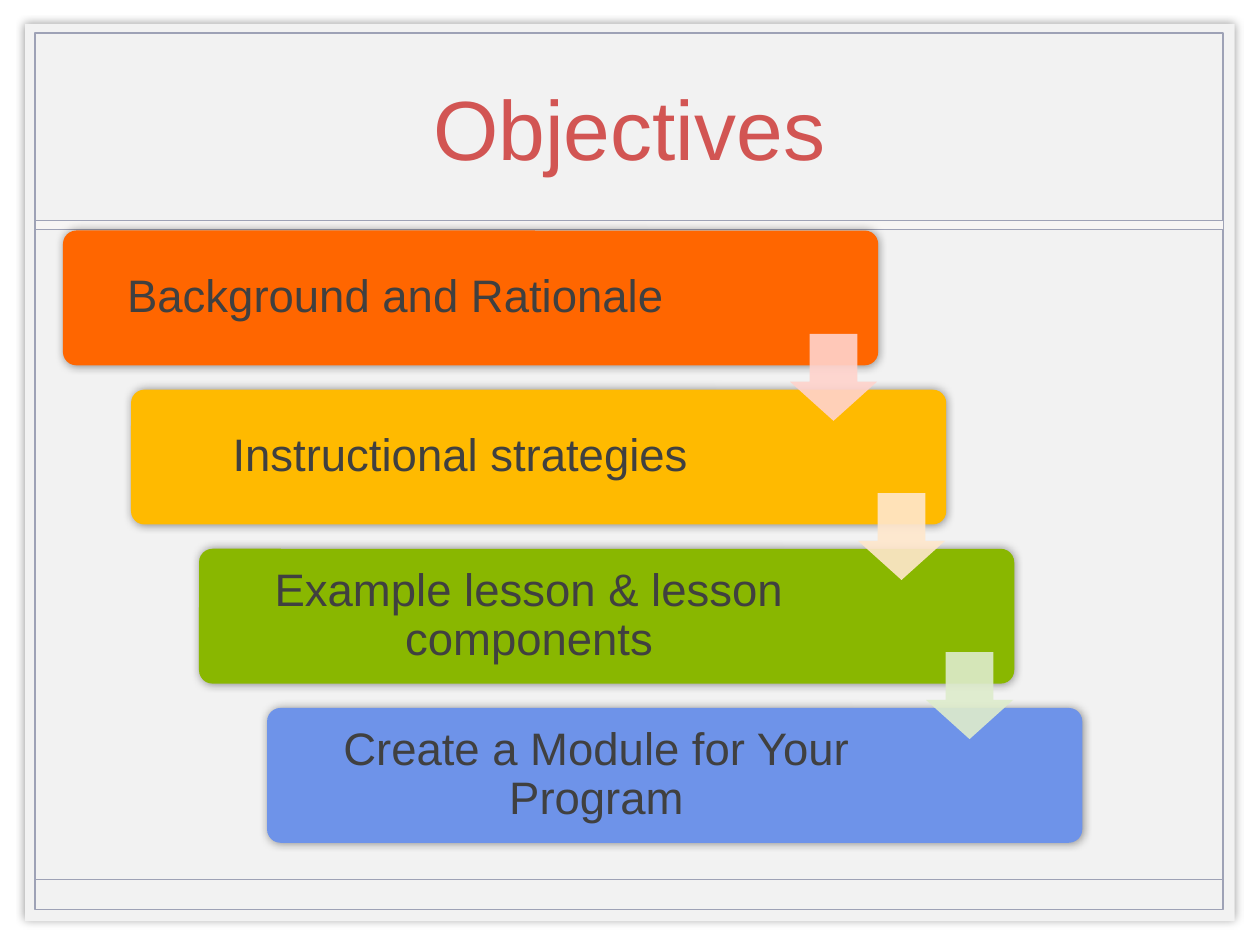
"""Build the Objectives slide: four staggered steps joined by down arrows."""
from lxml.etree import SubElement
from pptx import Presentation
from pptx.dml.color import RGBColor
from pptx.enum.shapes import MSO_CONNECTOR, MSO_SHAPE
from pptx.enum.text import MSO_ANCHOR, PP_ALIGN
from pptx.oxml.ns import qn
from pptx.util import Inches, Pt

TITLE = "Objectives"
STEPS = [
    ("Background and Rationale", "orange", "pale_red", 5.22),
    ("Instructional strategies", "amber", "pale_orange", 5.17),
    ("Example lesson & lesson components", "green", "pale_green", 5.18),
    ("Create a Module for Your Program", "blue", None, 5.17),
]
COLORS = {
    "panel": "F2F2F2", "band": "F7F5F4", "rule": "9EA2B6",
    "title": "D25553", "text": "404040", "shadow": "000000",
    "orange": "FF6600", "amber": "FFBA00", "green": "89B700", "blue": "6E93E9",
    "pale_red": "FFD3CC", "pale_orange": "FFE7CC", "pale_green": "DEECCC",
}
FONT = "Arial"
STEP_LEFT, STEP_TOP, STEP_W, STEP_H = 0.5, 1.83, 6.47, 1.07
SHIFT_X, SHIFT_Y = 0.54, 1.263
ARROW_LEFT, ARROW_TOP, ARROW_SIZE = 6.27, 2.65, 0.69
PAD = 0.03


def rgb(name):
    return RGBColor.from_string(COLORS[name])


def add_shadow(shape):
    effects = shape._element.spPr.find(qn("a:effectLst"))
    shadow = SubElement(effects, qn("a:outerShdw"), blurRad=str(Pt(5)), dist="0",
                        dir="0", algn="ctr", rotWithShape="0")
    color = SubElement(shadow, qn("a:srgbClr"), val=COLORS["shadow"])
    SubElement(color, qn("a:alpha"), val="40000")


def add_shape(slide, kind, box, fill=None, line_width=None, adjustments=()):
    sp = slide.shapes.add_shape(kind, *map(Inches, box))
    sp.shadow.inherit = False
    for i, value in enumerate(adjustments):
        sp.adjustments[i] = value
    if fill:
        sp.fill.solid()
        sp.fill.fore_color.rgb = rgb(fill)
    else:
        sp.fill.background()
    if line_width:
        sp.line.color.rgb = rgb("rule")
        sp.line.width = Pt(line_width)
    else:
        sp.line.fill.background()
    return sp


def add_text(slide, box, text, size, color, margin, spacing=1.0):
    tf = slide.shapes.add_textbox(*map(Inches, box)).text_frame
    tf.word_wrap = True
    tf.vertical_anchor = MSO_ANCHOR.MIDDLE
    tf.margin_left = tf.margin_right = Inches(margin)
    tf.margin_top = tf.margin_bottom = Inches(margin)
    tf.text = text
    p = tf.paragraphs[0]
    p.alignment = PP_ALIGN.CENTER
    p.line_spacing = spacing
    font = p.runs[0].font
    font.name, font.size, font.color.rgb = FONT, Pt(size), rgb(color)


def add_frame(slide):
    add_shadow(add_shape(slide, MSO_SHAPE.RECTANGLE, (0.2, 0.19, 9.6, 7.12), "panel"))
    add_shape(slide, MSO_SHAPE.RECTANGLE, (0.28, 0.26, 9.43, 6.96), line_width=1)
    rule = slide.shapes.add_connector(
        MSO_CONNECTOR.STRAIGHT, *map(Inches, (0.28, 6.98, 9.71, 6.98)))
    rule.line.color.rgb = rgb("rule")
    rule.line.width = Pt(1)
    SubElement(rule._element.spPr, qn("a:effectLst"))
    add_shape(slide, MSO_SHAPE.RECTANGLE, (0.28, 1.75, 9.43, 0.07), "band", 0.25)


def add_steps(slide):
    for i, (text, fill, _, text_w) in enumerate(STEPS):
        x, y = STEP_LEFT + i * SHIFT_X, STEP_TOP + i * SHIFT_Y
        add_shadow(add_shape(slide, MSO_SHAPE.ROUNDED_RECTANGLE,
                             (x, y, STEP_W, STEP_H), fill, adjustments=(0.1,)))
        add_text(slide, (x + PAD, y + PAD, text_w, STEP_H - 2 * PAD),
                 text, 26, "text", 0.11, 0.9)


def add_arrows(slide):
    for i, (_, _, fill, _) in enumerate(STEPS[:-1]):
        box = (ARROW_LEFT + i * SHIFT_X, ARROW_TOP + i * SHIFT_Y, ARROW_SIZE, ARROW_SIZE)
        sp = add_shape(slide, MSO_SHAPE.DOWN_ARROW, box, fill, adjustments=(0.55, 0.45))
        color = sp._element.spPr.find(qn("a:solidFill"))[0]
        SubElement(color, qn("a:alpha"), val="90000")


def main():
    prs = Presentation()
    prs.slide_width, prs.slide_height = Inches(10), Inches(7.5)
    slide = prs.slides.add_slide(prs.slide_layouts[6])
    add_frame(slide)
    add_text(slide, (0.98, 0.27, 8.03, 1.47), TITLE, 48, "title", 0.05)
    add_steps(slide)
    add_arrows(slide)
    prs.save("out.pptx")


if __name__ == "__main__":
    main()
